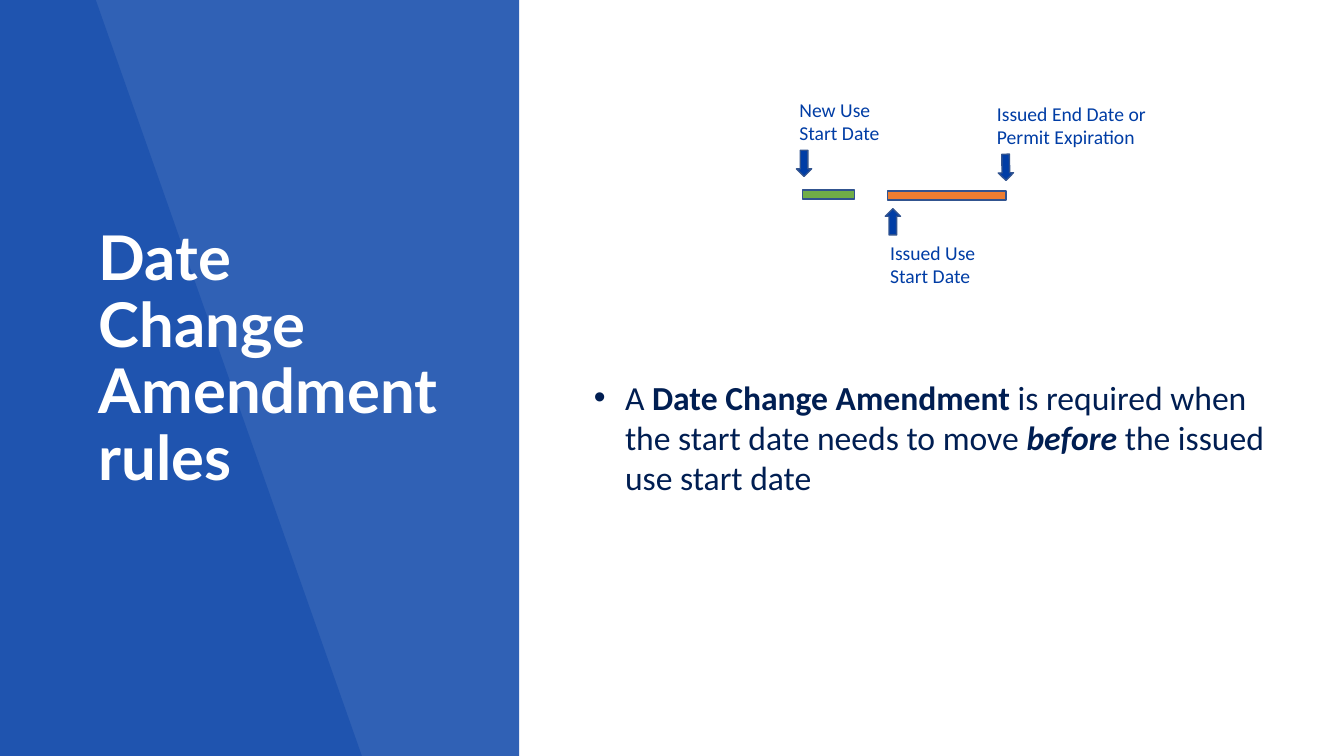
from lxml import etree
from pptx import Presentation
from pptx import util as u
from pptx.dml.color import RGBColor
from pptx.enum import shapes, text
from pptx.oxml.ns import qn

WIDTH, HEIGHT = u.Inches(13.33), u.Inches(7.5)
BLUE, NAVY, OUTLINE = "003DA5", "001E52", "31538F"
ORANGE, GREEN, WHITE = "ED7D31", "70AD47", "FFFFFF"


def rgb(code):
    """Turn a hex string into a colour."""
    return RGBColor.from_string(code)


def box(x, y, w, h):
    """Turn percentages of the slide into left, top, width and height."""
    return (int(WIDTH * x / 100), int(HEIGHT * y / 100),
            int(WIDTH * w / 100), int(HEIGHT * h / 100))


def paint(sp, color, line=None, opacity=None):
    """Fill a shape, with an optional outline and opacity in percent."""
    sp.shadow.inherit = False
    sp.fill.solid()
    sp.fill.fore_color.rgb = rgb(color)
    if opacity:
        clr = sp.fill._xPr.find(qn("a:solidFill"))[0]
        etree.SubElement(clr, qn("a:alpha"), val=str(opacity * 1000))
    if line:
        sp.line.color.rgb = rgb(line)
        sp.line.width = u.Pt(1)
    else:
        sp.line.fill.background()


def set_font(font, name, size, color):
    """Set the typeface, size and colour of a font."""
    font.name, font.size = name, u.Pt(size)
    font.color.rgb = rgb(color)


def add_preset(s, kind, area, color, line=None, opacity=None):
    """Add a painted preset shape."""
    sp = s.shapes.add_shape(kind, *box(*area))
    paint(sp, color, line, opacity)
    return sp


def add_wedge(s):
    """Add the slanted overlay on the left panel."""
    points = [box(x, y, 0, 0)[:2]
              for x, y in ((0, 0), (7.13, 0), (26.93, 100), (0, 100))]
    builder = s.shapes.build_freeform(*points[0], scale=1.0)
    builder.add_line_segments(points[1:], close=True)
    paint(builder.convert_to_shape(), BLUE, opacity=35)


def add_title(s, words):
    """Format the title placeholder and bring it above the panel."""
    title = s.shapes.title
    title.left, title.top, title.width, title.height = box(6.6, 9.33, 26.93, 76.67)
    tf = title.text_frame
    tf.text = words
    tf.word_wrap = True
    tf.auto_size = text.MSO_AUTO_SIZE.NONE
    tf.vertical_anchor = text.MSO_ANCHOR.MIDDLE
    p = tf.paragraphs[0]
    p.alignment, p.line_spacing = text.PP_ALIGN.LEFT, 0.9
    set_font(p.font, "Lato", 44, WHITE)
    p.font.bold = True
    s.shapes._spTree.append(title._element)


def add_text(s, area, runs, size, color):
    """Add a wrapped text box of (words, bold, italic) runs."""
    tf = s.shapes.add_textbox(*box(*area)).text_frame
    tf.word_wrap = True
    p = tf.paragraphs[0]
    for words, bold, italic in runs:
        r = p.add_run()
        r.text = words
        r.font.bold, r.font.italic = bold, italic
    set_font(p.font, "Calibri", size, color)
    return tf


def add_rule(s, area, runs):
    """Add the bulleted rule."""
    tf = add_text(s, area, runs, 24, NAVY)
    tf.vertical_anchor = text.MSO_ANCHOR.MIDDLE
    pPr = tf.paragraphs[0]._p.get_or_add_pPr()
    indent = u.Inches(0.31)
    pPr.set("marL", str(indent))
    pPr.set("indent", str(-indent))
    font = etree.Element(qn("a:buFont"), typeface="Arial")
    bullet = etree.Element(qn("a:buChar"), char="•")
    pPr.insert(0, font)
    pPr.insert(1, bullet)


def add_marker(s, words, arrow, rotation, label):
    """Add a date arrow and its label."""
    sp = add_preset(s, shapes.MSO_SHAPE.UP_ARROW, (*arrow, 1.13, 3.47), BLUE, OUTLINE)
    sp.rotation = rotation
    add_text(s, (*label, 7.6), [(words, False, False)], 14, BLUE)


def main():
    """Build and save the slide."""
    prs = Presentation()
    prs.slide_width, prs.slide_height = WIDTH, HEIGHT
    s = prs.slides.add_slide(prs.slide_layouts[5])
    add_preset(s, shapes.MSO_SHAPE.RECTANGLE, (0, 0, 38.63, 100), BLUE, opacity=81)
    add_wedge(s)
    add_title(s, "Date Change Amendment rules")
    add_rule(s, (43.44, 48.67, 51.54, 18.27), [
        ("A ", False, False),
        ("Date Change Amendment", True, False),
        (" is required when the start date needs to move ", False, False),
        ("before", True, True),
        (" the issued use start date", False, False),
    ])
    for area, color in (((64.44, 23.33, 12, 5.07), ORANGE),
                        ((59.04, 23.2, 5.25, 5.07), GREEN)):
        add_preset(s, shapes.MSO_SHAPE.MATH_MINUS, area, color, OUTLINE)
    for marker in (
        ("Issued Use Start Date", (65.87, 27.6), 0, (65.49, 31.2, 9.98)),
        ("Issued End Date or Permit Expiration", (74.27, 20.4), 179, (73.44, 12.8, 13.05)),
        ("New Use Start Date", (59.26, 19.87), 180, (58.74, 12.27, 9.3)),
    ):
        add_marker(s, *marker)
    prs.save("out.pptx")


if __name__ == "__main__":
    main()
